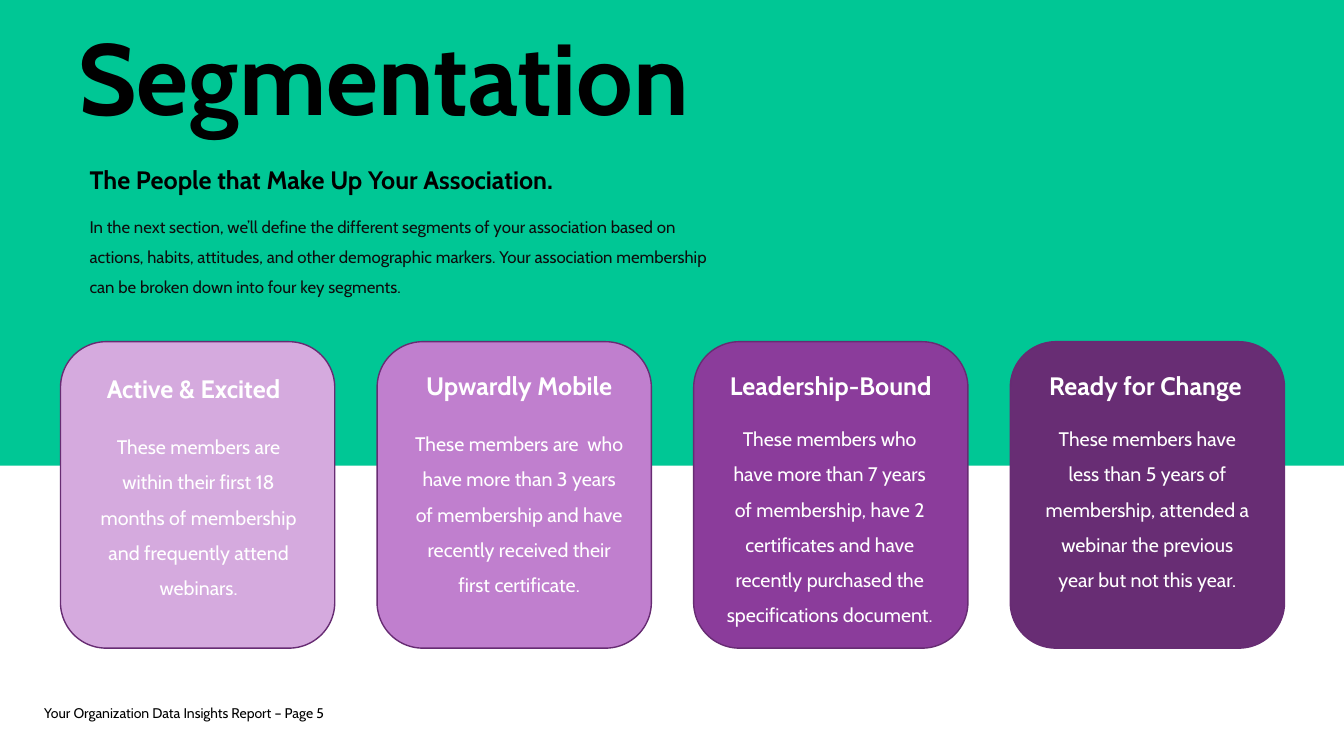
import pptx
import pptx.util
import pptx.dml.color
import pptx.enum.shapes
import pptx.enum.text

PX = 9144
FONT = "Cabin"
HUES = {
    "green": "00C795",
    "black": "000000",
    "ink": "0D0D0D",
    "white": "FFFFFF",
    "edge": "672C73",
    "pale": "D5AADE",
    "light": "C07FCE",
    "mid": "8B3C9B",
    "dark": "682D74",
}
LEFT, TOP, WIDE, HIGH, STEP = 60, 339, 272, 304, 314
CARDS = [
    ("pale", "Active & Excited", (79, 350), (83, 415, 183),
     "These members are within their first 18 months of membership "
     "and frequently attend webinars."),
    ("light", "Upwardly Mobile", (402, 347), (401, 412, 183),
     "These members are  who have more than 3 years of membership "
     "and have recently received their first certificate."),
    ("mid", "Leadership-Bound", (711, 347), (709, 407, 218),
     "These members who have more than 7 years of membership, have 2 "
     "certificates and have recently purchased the specifications document."),
    ("dark", "Ready for Change", (1023, 347), (1024, 407, 183),
     "These members have less than 5 years of membership, attended a "
     "webinar the previous year but not this year."),
]


def color(name):
    return pptx.dml.color.RGBColor.from_string(HUES[name])


def scale(*box):
    return [pptx.util.Emu(n * PX) for n in box]


def block(slide, kind, box, fill, edge=None):
    shape = slide.shapes.add_shape(kind, *scale(*box))
    shape.shadow.inherit = False
    shape.fill.solid()
    shape.fill.fore_color.rgb = color(fill)
    if edge:
        shape.line.color.rgb = color(edge)
        shape.line.width = pptx.util.Pt(1)
    else:
        shape.line.fill.background()


def label(slide, box, text, size, hue="black", bold=False, lead=1.5, mid=False):
    frame = slide.shapes.add_textbox(*scale(*box)).text_frame
    frame.word_wrap = True
    frame.auto_size = pptx.enum.text.MSO_AUTO_SIZE.SHAPE_TO_FIT_TEXT
    para = frame.paragraphs[0]
    para.line_spacing = lead
    align = pptx.enum.text.PP_ALIGN
    para.alignment = align.CENTER if mid else align.LEFT
    run = para.add_run()
    run.text = text
    run.font.name = FONT
    run.font.size = pptx.util.Pt(size)
    run.font.bold = bold
    run.font.color.rgb = color(hue)


def card(slide, rank, fill, head, spot, place, body):
    kind = pptx.enum.shapes.MSO_SHAPE.ROUNDED_RECTANGLE
    block(slide, kind, (LEFT + rank * STEP, TOP, WIDE, HIGH), fill, "edge")
    label(slide, (*spot, 226, 51), head, 18, "white", bold=True, mid=True)
    left, top, high = place
    label(slide, (left, top, 228, high), body, 14, "white", mid=True)


def main():
    deck = pptx.Presentation()
    deck.slide_width, deck.slide_height = scale(1333, 750)
    slide = deck.slides.add_slide(deck.slide_layouts[6])
    block(slide, pptx.enum.shapes.MSO_SHAPE.RECTANGLE, (0, 0, 1333, 462), "green")
    label(slide, (68, 10, 789, 131), "Segmentation", 72, bold=True, lead=1.0)
    label(slide, (79, 143, 517, 51),
          "The People that Make Up Your Association.", 18, bold=True)
    label(slide, (79, 200, 654, 98),
          "In the next section, we’ll define the different segments of your "
          "association based on actions, habits, attitudes, and other "
          "demographic markers. Your association membership can be broken "
          "down into four key segments.", 12, "ink")
    for rank, item in enumerate(CARDS):
        card(slide, rank, *item)
    label(slide, (34, 694, 302, 27),
          "Your Organization Data Insights Report – Page 5", 10, lead=1.0)
    deck.save("out.pptx")


if __name__ == "__main__":
    main()
